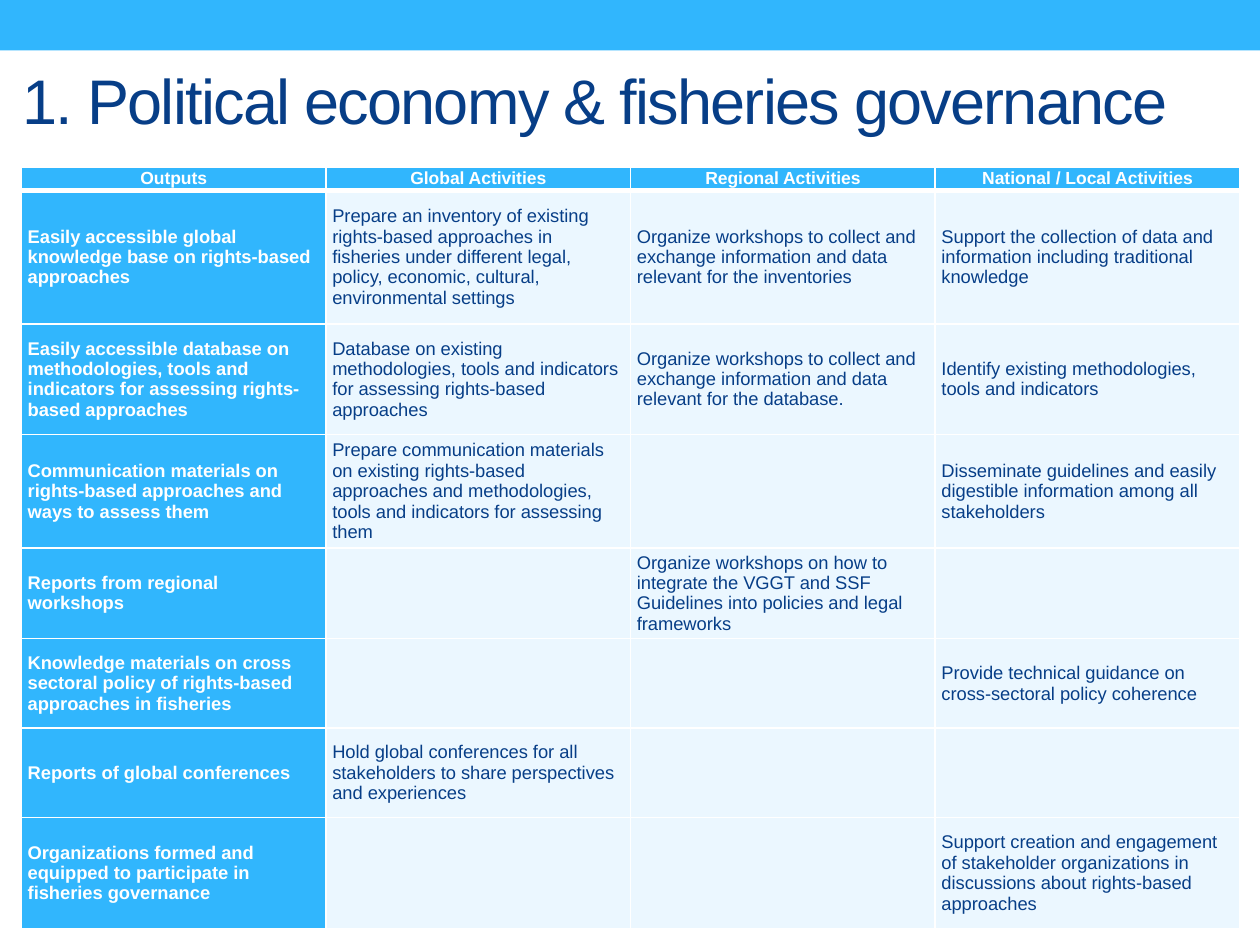
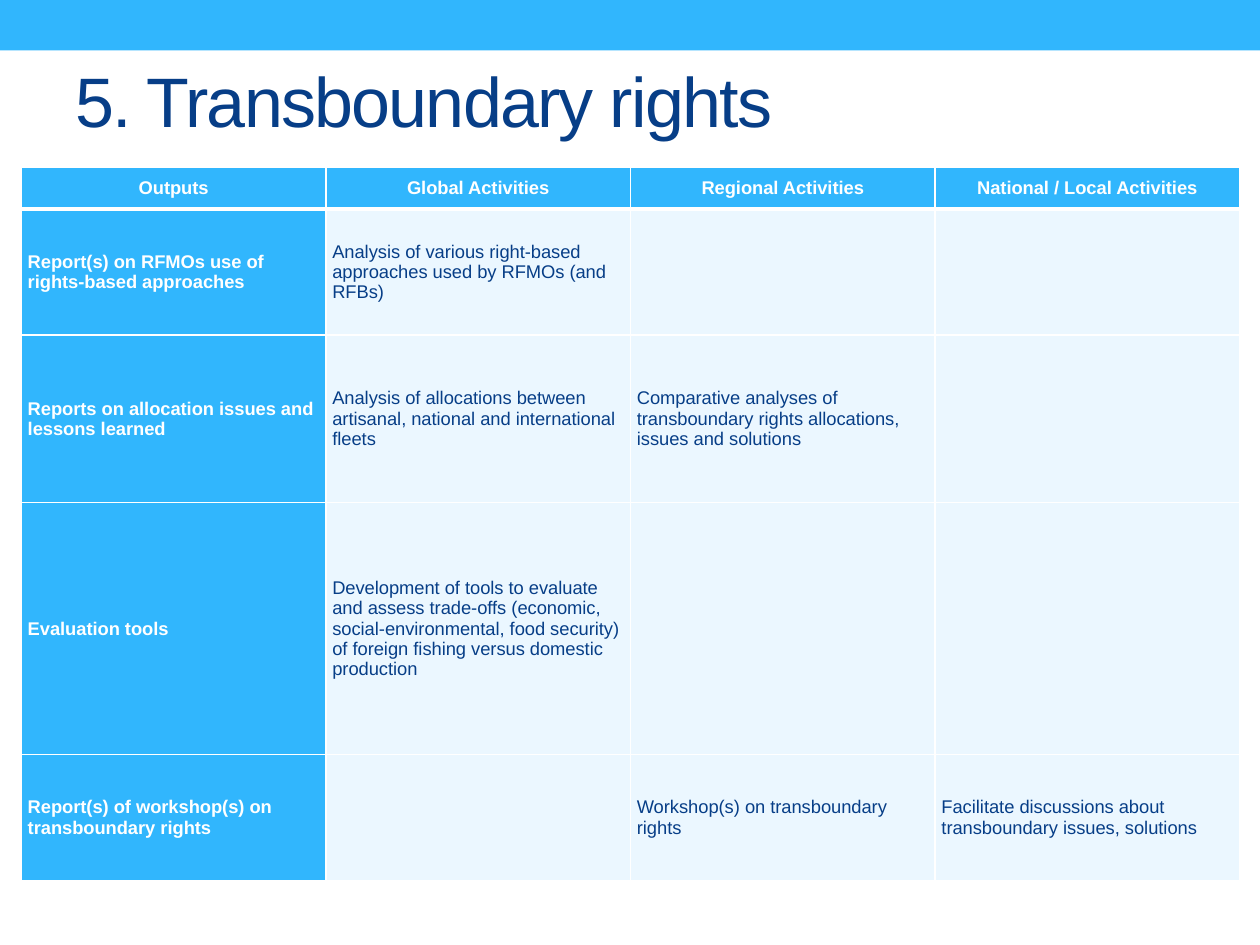
from dataclasses import dataclass

from lxml import etree
from pptx import Presentation
from pptx.dml.color import RGBColor
from pptx.enum.shapes import MSO_SHAPE
from pptx.enum.text import MSO_ANCHOR, MSO_AUTO_SIZE, PP_ALIGN
from pptx.oxml.ns import qn
from pptx.util import Inches, Pt

# Shared style
SKY = RGBColor(0x31, 0xB6, 0xFD)
PALE = RGBColor(0xEB, 0xF7, 0xFF)
NAVY = RGBColor(0x07, 0x3E, 0x87)
WHITE = RGBColor(0xFF, 0xFF, 0xFF)
FONT = "Arial"
BODY_SIZE = 10.5
THIN, THICK = 1, 3

RECTANGLE = MSO_SHAPE.RECTANGLE
MIDDLE = MSO_ANCHOR.MIDDLE
NO_AUTOFIT = MSO_AUTO_SIZE.NONE
LEFT, CENTER = PP_ALIGN.LEFT, PP_ALIGN.CENTER

TITLE_ONLY = 5
TABLE_LEFT, TABLE_TOP, TABLE_WIDTH = Inches(0.17), Inches(1.33), Inches(9.67)
HEADINGS = ("Outputs", "Global Activities", "Regional Activities", "National / Local Activities")


@dataclass
class OutputRow:
    height: float
    output: str
    global_activity: str = ""
    regional_activity: str = ""
    local_activity: str = ""

    def texts(self) -> tuple[str, ...]:
        return self.output, self.global_activity, self.regional_activity, self.local_activity


@dataclass
class Theme:
    title: str
    title_left: float
    title_size: float
    heading_height: float
    heading_size: float
    rows: list[OutputRow]


THEMES = [
    Theme("1. Political economy & fisheries governance", 0.08, 36, 0.18, 10, [
        OutputRow(
            1.06,
            "Easily accessible global knowledge base on rights-based approaches",
            "Prepare an inventory of existing rights-based approaches in fisheries under "
            "different legal, policy, economic, cultural, environmental settings",
            "Organize workshops to collect and exchange information and data relevant "
            "for the inventories",
            "Support the collection of data and information including traditional knowledge",
        ),
        OutputRow(
            0.88,
            "Easily accessible database on methodologies, tools and indicators for "
            "assessing rights-based approaches",
            "Database on existing methodologies, tools and indicators for assessing "
            "rights-based approaches",
            "Organize workshops to collect and exchange information and data relevant "
            "for the database.",
            "Identify existing methodologies, tools and indicators",
        ),
        OutputRow(
            0.9,
            "Communication materials on rights-based approaches and ways to assess them",
            "Prepare communication materials on existing rights-based approaches and "
            "methodologies, tools and indicators for assessing them",
            local_activity="Disseminate guidelines and easily digestible information "
            "among all stakeholders",
        ),
        OutputRow(
            0.72,
            "Reports from regional workshops",
            regional_activity="Organize workshops on how to integrate the VGGT and SSF "
            "Guidelines into policies and legal frameworks",
        ),
        OutputRow(
            0.71,
            "Knowledge materials on cross sectoral policy of rights-based approaches "
            "in fisheries",
            local_activity="Provide technical guidance on cross-sectoral policy coherence",
        ),
        OutputRow(
            0.71,
            "Reports of global conferences",
            "Hold global conferences for all stakeholders to share perspectives and experiences",
        ),
        OutputRow(
            0.88,
            "Organizations formed and equipped to participate in fisheries governance",
            local_activity="Support creation and engagement of stakeholder organizations "
            "in discussions about rights-based approaches",
        ),
    ]),
    Theme("5. Transboundary rights", 0.5, 40, 0.33, BODY_SIZE, [
        OutputRow(
            1,
            "Report(s) on RFMOs use of rights-based approaches",
            "Analysis of various right-based approaches used by RFMOs (and RFBs)",
        ),
        OutputRow(
            1.33,
            "Reports on allocation issues and lessons learned",
            "Analysis of allocations between artisanal, national and international fleets",
            "Comparative analyses of transboundary rights allocations, issues and solutions",
        ),
        OutputRow(
            2,
            "Evaluation tools",
            "Development of tools to evaluate and assess trade-offs (economic, "
            "social-environmental, food security) of foreign fishing versus domestic production",
        ),
        OutputRow(
            1,
            "Report(s) of workshop(s) on transboundary rights",
            regional_activity="Workshop(s) on transboundary rights",
            local_activity="Facilitate discussions about transboundary issues, solutions",
        ),
    ]),
]


def style_font(font, size: float, color: RGBColor, bold: bool = False) -> None:
    font.name = FONT
    font.size = Pt(size)
    font.bold = bold
    font.color.rgb = color


def add_band(slide, width: int) -> None:
    band = slide.shapes.add_shape(RECTANGLE, 0, 0, width, Inches(0.4))
    band.shadow.inherit = False
    band.fill.solid()
    band.fill.fore_color.rgb = SKY
    band.line.fill.background()


def set_title(slide, theme: Theme) -> None:
    title = slide.shapes.title
    title.left, title.top = Inches(theme.title_left), Inches(0.25)
    title.width, title.height = Inches(9.5), Inches(1.08)
    frame = title.text_frame
    frame.text = theme.title
    frame.auto_size = NO_AUTOFIT
    frame.vertical_anchor = MIDDLE
    paragraph = frame.paragraphs[0]
    paragraph.alignment = LEFT
    run = paragraph.runs[0]
    style_font(run.font, theme.title_size, NAVY)
    run._r.get_or_add_rPr().set("spc", "-100")


def set_borders(cell, top: float, bottom: float) -> None:
    properties = cell._tc.get_or_add_tcPr()
    for side, width in (("L", THIN), ("R", THIN), ("T", top), ("B", bottom)):
        line = etree.SubElement(properties, qn(f"a:ln{side}"), w=str(Pt(width)))
        fill = etree.SubElement(line, qn("a:solidFill"))
        etree.SubElement(fill, qn("a:srgbClr"), val=str(WHITE))


def fill_cell(cell, text: str, size: float, is_heading: bool, is_output: bool) -> None:
    emphasized = is_heading or is_output
    cell.margin_left = cell.margin_right = Inches(0.05)
    cell.margin_top = cell.margin_bottom = 0
    cell.vertical_anchor = MIDDLE
    cell.fill.solid()
    cell.fill.fore_color.rgb = SKY if emphasized else PALE
    cell.text_frame.text = text
    paragraph = cell.text_frame.paragraphs[0]
    paragraph.alignment = CENTER if is_heading else LEFT
    for run in paragraph.runs:
        style_font(run.font, size, WHITE if emphasized else NAVY, emphasized)


def add_activity_table(slide, theme: Theme) -> None:
    heights = [theme.heading_height] + [row.height for row in theme.rows]
    contents = [HEADINGS] + [row.texts() for row in theme.rows]
    table = slide.shapes.add_table(
        len(contents), len(HEADINGS), TABLE_LEFT, TABLE_TOP, TABLE_WIDTH, Inches(sum(heights))
    ).table
    for column in table.columns:
        column.width = TABLE_WIDTH // len(HEADINGS)
    for r, (height, texts) in enumerate(zip(heights, contents)):
        table.rows[r].height = Inches(height)
        size = theme.heading_size if r == 0 else BODY_SIZE
        for c, text in enumerate(texts):
            cell = table.cell(r, c)
            set_borders(cell, THICK if r == 1 else THIN, THICK if r == 0 else THIN)
            fill_cell(cell, text, size, r == 0, c == 0)


def main() -> None:
    deck = Presentation()
    deck.slide_width, deck.slide_height = Inches(10), Inches(7.5)
    for theme in THEMES:
        slide = deck.slides.add_slide(deck.slide_layouts[TITLE_ONLY])
        add_band(slide, deck.slide_width)
        set_title(slide, theme)
        add_activity_table(slide, theme)
    deck.save("out.pptx")


if __name__ == "__main__":
    main()
